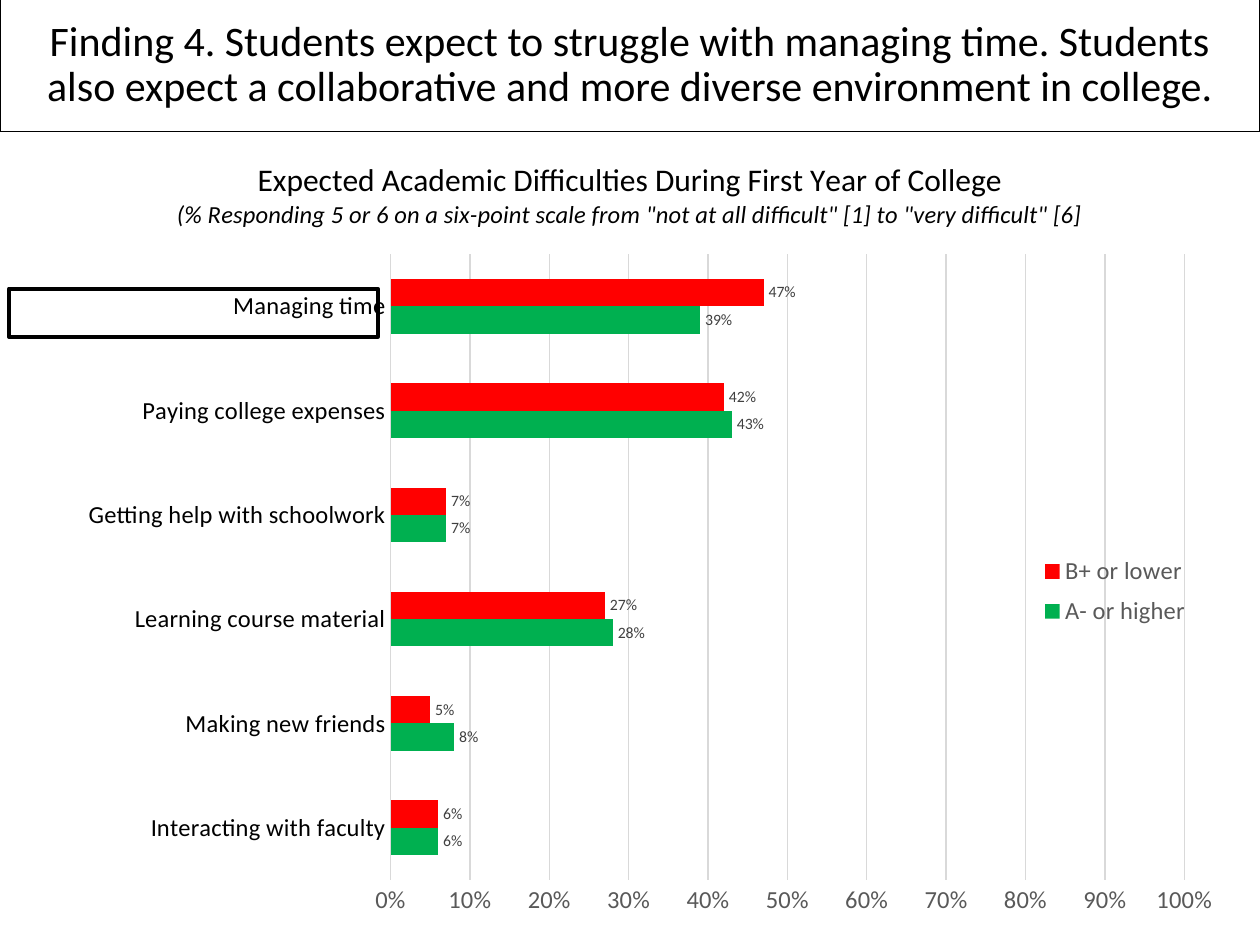
from lxml import etree
from pptx import Presentation
from pptx.chart.data import CategoryChartData
from pptx.dml.color import RGBColor
from pptx.enum.chart import XL_CHART_TYPE, XL_LABEL_POSITION, XL_LEGEND_POSITION, XL_TICK_MARK
from pptx.enum.shapes import MSO_SHAPE
from pptx.enum.text import MSO_ANCHOR, PP_ALIGN
from pptx.util import Cm, Pt

BAR = XL_CHART_TYPE.BAR_CLUSTERED
OUTSIDE = XL_LABEL_POSITION.OUTSIDE_END
RIGHT = XL_LEGEND_POSITION.RIGHT
NO_TICK = XL_TICK_MARK.NONE
RECTANGLE = MSO_SHAPE.RECTANGLE
MIDDLE = MSO_ANCHOR.MIDDLE
CENTER = PP_ALIGN.CENTER

COLORS = {"text": "000000", "muted": "595959", "label": "404040",
          "grid": "D9D9D9", "high": "00B050", "low": "FF0000"}
HEADLINE = ("Finding 4. Students expect to struggle with managing time. Students "
            "also expect a collaborative and more diverse environment in college.")
CHART_TITLE = [
    ("Expected Academic Difficulties During First Year of College", {"size": Pt(18), "italic": False}),
    ('(% Responding 5 or 6 on a six-point scale from "not at all difficult" [1] to '
     '"very difficult" [6]', {"size": Pt(14), "italic": True}),
]
CATEGORIES = ["Interacting with faculty", "Making new friends", "Learning course material",
              "Getting help with schoolwork", "Paying college expenses", "Managing time"]
SERIES = [
    ("A- or higher", "high", [0.06, 0.08, 0.28, 0.07, 0.43, 0.39]),
    ("B+ or lower", "low", [0.06, 0.05, 0.27, 0.07, 0.42, 0.47]),
]
PLOT_AREA = {"x": 0.31, "y": 0.15, "w": 0.63, "h": 0.77}
LEGEND_AREA = {"x": 0.82, "y": 0.51, "w": 0.13, "h": 0.11}


def rgb(name):
    """Return the named palette colour."""
    return RGBColor.from_string(COLORS[name])


def set_font(font, color, **values):
    """Apply the typeface, a colour and further format values to a font."""
    for key, value in {"name": "Calibri", "bold": False, **values}.items():
        setattr(font, key, value)
    font.color.rgb = rgb(color)


def set_line(line, color, width):
    """Draw a line in a colour and a width in points."""
    line.color.rgb = rgb(color)
    line.width = Pt(width)


def add_frame(page, place, width):
    """Add an unfilled black rectangle and return it."""
    box = page.shapes.add_shape(RECTANGLE, *map(Cm, place))
    box.shadow.inherit = False
    box.fill.background()
    set_line(box.line, "text", width)
    return box


def add_headline(page):
    """Add the framed headline across the top."""
    box = add_frame(page, (0, -0.03, 25.4, 2.69), 0.75)
    box.text_frame.word_wrap = True
    box.text_frame.vertical_anchor = MIDDLE
    para = box.text_frame.paragraphs[0]
    para.alignment = CENTER
    para.line_spacing = 0.9
    span = para.add_run()
    span.text = HEADLINE
    set_font(span.font, "text", size=Pt(24))


def place_part(part, area, inner=False):
    """Give a chart part a manual layout in fractions of the chart."""
    namespace = part.nsmap["c"]
    for old in part.findall(f"{{{namespace}}}layout"):
        part.remove(old)
    layout = etree.Element(f"{{{namespace}}}layout")
    manual = etree.SubElement(layout, f"{{{namespace}}}manualLayout")
    settings = {"layoutTarget": "inner"} if inner else {}
    settings |= {"xMode": "edge", "yMode": "edge", **area}
    for tag, value in settings.items():
        etree.SubElement(manual, f"{{{namespace}}}{tag}", val=str(value))
    position = part.find(f"{{{namespace}}}legendPos")
    part.insert(0 if position is None else part.index(position) + 1, layout)


def format_title(chart):
    """Write the chart title with its italic second line."""
    frame = chart.chart_title.text_frame
    for index, (text, values) in enumerate(CHART_TITLE):
        para = frame.add_paragraph() if index else frame.paragraphs[0]
        para.alignment = CENTER
        span = para.add_run()
        span.text = text
        set_font(span.font, "text", **values)


def format_axes(chart):
    """Style both axes and the gridlines."""
    for axis, color in ((chart.category_axis, "text"), (chart.value_axis, "muted")):
        axis.major_tick_mark = axis.minor_tick_mark = NO_TICK
        set_font(axis.tick_labels.font, color, size=Pt(14))
    set_line(chart.category_axis.format.line, "grid", 0.75)
    values = chart.value_axis
    values.minimum_scale, values.maximum_scale, values.major_unit = 0, 1, 0.1
    values.format.line.fill.background()
    values.has_major_gridlines = True
    set_line(values.major_gridlines.format.line, "grid", 0.75)
    values.tick_labels.number_format = "0%"
    values.tick_labels.number_format_is_linked = False


def format_series(series, color):
    """Colour one series and label its bars."""
    series.format.fill.solid()
    series.format.fill.fore_color.rgb = rgb(color)
    labels = series.data_labels
    for key, value in {"show_value": True, "number_format": "0%",
                       "number_format_is_linked": False, "position": OUTSIDE}.items():
        setattr(labels, key, value)
    set_font(labels.font, "label", size=Pt(9))


def format_legend(chart):
    """Place the legend over the right side of the plot."""
    chart.has_legend = True
    chart.legend.position = RIGHT
    chart.legend.include_in_layout = False
    set_font(chart.legend.font, "muted", size=Pt(14))
    place_part(chart.legend._element, LEGEND_AREA)


def add_difficulty_chart(page):
    """Add the bar chart of expected difficulties."""
    data = CategoryChartData(number_format="0%")
    data.categories = CATEGORIES
    for name, _, values in SERIES:
        data.add_series(name, values)
    chart = page.shapes.add_chart(BAR, Cm(0), Cm(2.67), Cm(25.4), Cm(16.38), data).chart
    set_font(chart.font, "text", size=Pt(10))
    format_title(chart)
    format_axes(chart)
    format_legend(chart)
    plot = chart.plots[0]
    plot.gap_width = 182
    plot.vary_by_categories = False
    for series, (_, color, _) in zip(plot.series, SERIES):
        format_series(series, color)
    place_part(chart._chartSpace.chart.plotArea, PLOT_AREA, inner=True)


def main():
    """Build and save the slide."""
    deck = Presentation()
    deck.slide_width, deck.slide_height = Cm(25.4), Cm(19.05)
    page = deck.slides.add_slide(deck.slide_layouts[6])
    add_difficulty_chart(page)
    add_headline(page)
    add_frame(page, (0.18, 5.82, 7.44, 0.97), 2.25)
    deck.save("out.pptx")


if __name__ == "__main__":
    main()
